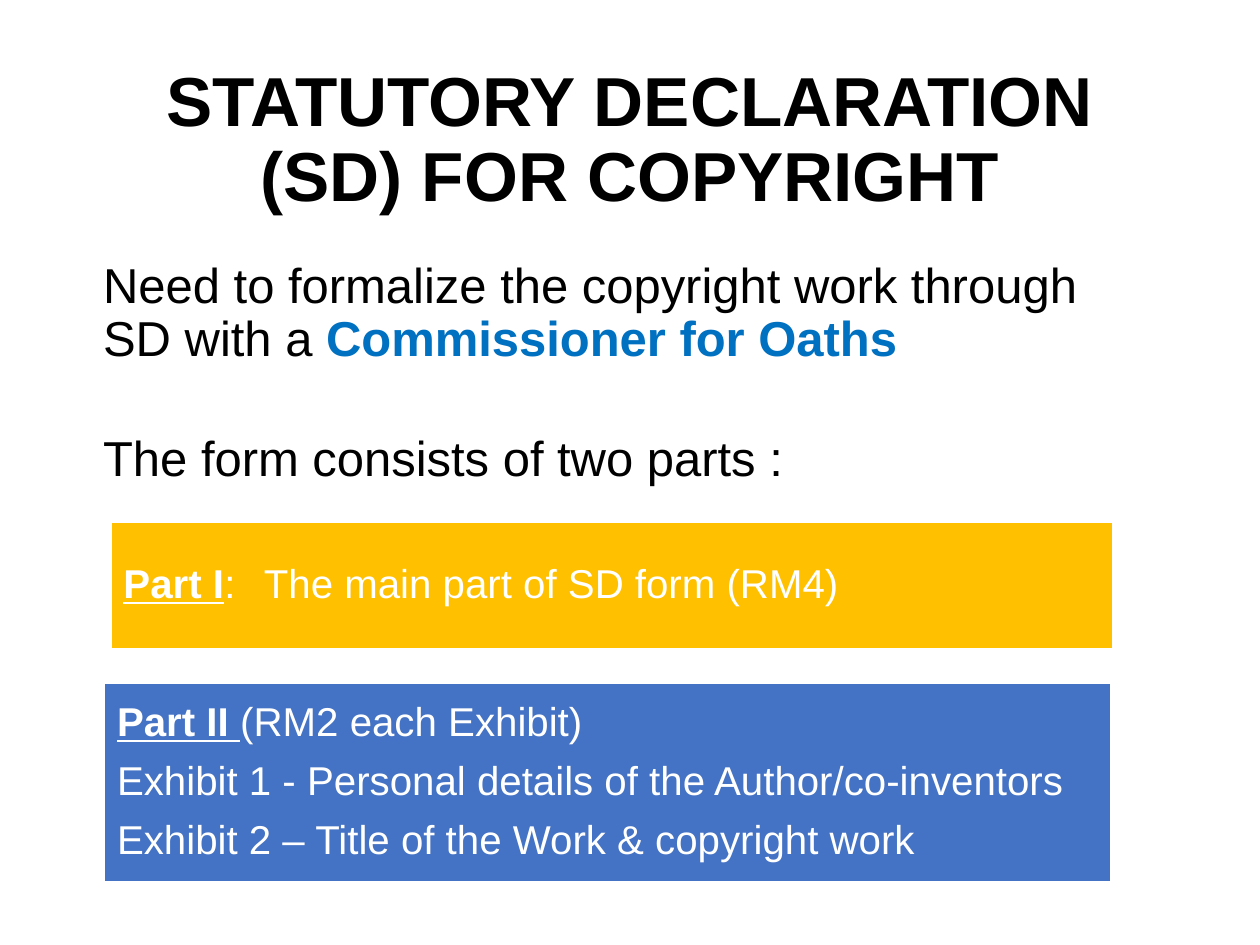
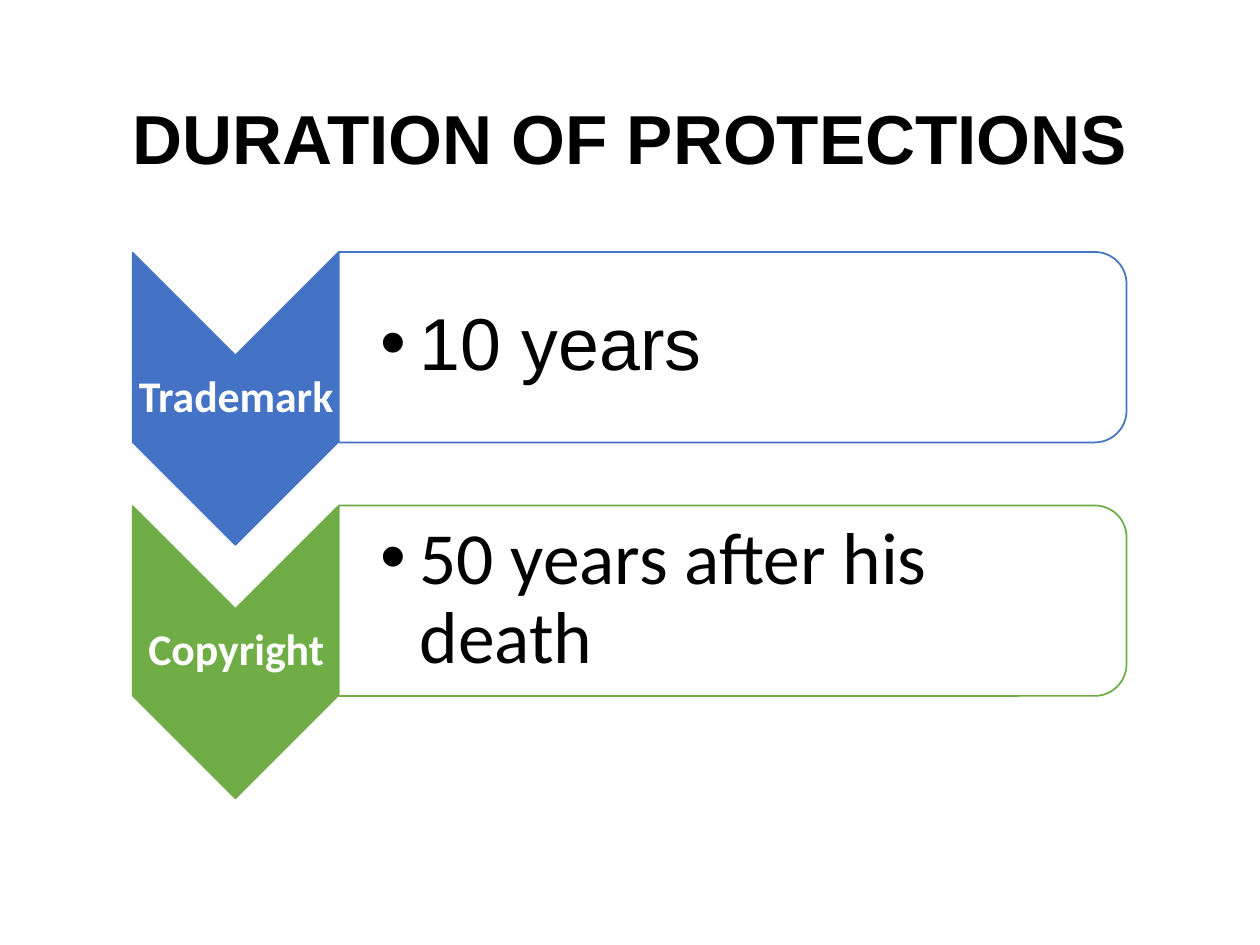
"""Builds two slides on the statutory declaration and the duration of protections."""
from dataclasses import dataclass

from lxml.etree import SubElement
from pptx import Presentation
from pptx.dml.color import RGBColor as RGB
from pptx.enum.shapes import MSO_SHAPE as SHAPE
from pptx.enum.text import MSO_ANCHOR as ANCHOR, MSO_AUTO_SIZE as AUTO_SIZE, PP_ALIGN as ALIGN
from pptx.oxml.ns import qn
from pptx.util import Cm, Pt


@dataclass(frozen=True)
class Theme:
    black: RGB = RGB(0x00, 0x00, 0x00)
    white: RGB = RGB(0xFF, 0xFF, 0xFF)
    blue: RGB = RGB(0x44, 0x72, 0xC4)
    green: RGB = RGB(0x70, 0xAD, 0x47)
    amber: RGB = RGB(0xFF, 0xC0, 0x00)
    highlight: RGB = RGB(0x00, 0x70, 0xC0)
    font: str = "Arial"
    label_font: str = "Calibri"
    title_size: float = 39.6
    body_size: float = 28
    part_size: float = 23
    label_size: float = 25
    duration_size: float = 42


theme = Theme()


def write_text(shape, paragraphs, size, color, font=theme.font, bold=False, align=ALIGN.LEFT,
               anchor=ANCHOR.MIDDLE, inset=(0.25, 0.25), before=0, after=0):
    """Fill a shape with paragraphs, each a list of (text, run overrides) pairs."""
    frame = shape.text_frame
    frame.word_wrap = True
    frame.auto_size = AUTO_SIZE.NONE
    frame.vertical_anchor = anchor
    frame.margin_left = frame.margin_right = Cm(inset[0])
    frame.margin_top = frame.margin_bottom = Cm(inset[1])
    for index, pieces in enumerate(paragraphs):
        paragraph = frame.add_paragraph() if index else frame.paragraphs[0]
        paragraph.alignment = align
        paragraph.line_spacing = 0.9
        paragraph.space_before = Pt(before)
        paragraph.space_after = Pt(after)
        for text, overrides in pieces:
            run = paragraph.add_run()
            run.text = text
            run.font.name = font
            run.font.size = Pt(size)
            run.font.bold = overrides.get("bold", bold)
            run.font.underline = overrides.get("underline", False)
            run.font.color.rgb = overrides.get("color", color)
    return frame


def add_block(slide, kind, box, fill, line):
    """Add a flat preset shape with a thin outline."""
    shape = slide.shapes.add_shape(kind, *map(Cm, box))
    shape.shadow.inherit = False
    shape.fill.solid()
    shape.fill.fore_color.rgb = fill
    shape.line.color.rgb = line
    shape.line.width = Pt(1)
    return shape


presentation = Presentation()
presentation.slide_width, presentation.slide_height = Cm(25.4), Cm(19.05)
title_only = presentation.slide_layouts[5]

slides = []
for heading in ("STATUTORY DECLARATION (SD) FOR COPYRIGHT", "DURATION OF PROTECTIONS"):
    slide = presentation.slides.add_slide(title_only)
    title = slide.shapes.title
    title.left, title.top, title.width, title.height = map(Cm, (1.75, 1.02, 21.9, 3.68))
    write_text(title, [[(heading, {})]], theme.title_size, theme.black, bold=True,
               align=ALIGN.CENTER, inset=(0.33, 0.18))
    slides.append(slide)
declaration, duration = slides

body = declaration.shapes.add_textbox(Cm(1.75), Cm(5.08), Cm(21.9), Cm(5.2))
body_frame = write_text(
    body,
    [[("Need to formalize the copyright work through SD with a ", {}),
      ("Commissioner for Oaths", {"bold": True, "color": theme.highlight})],
     [("The form consists of two parts :", {})]],
    theme.body_size, theme.black, anchor=ANCHOR.TOP, inset=(0.33, 0.18), before=10)
body_frame.paragraphs[1].space_before = Pt(38.5)

part_name = {"bold": True, "underline": True}
parts = [
    ((2.24, 10.52, 20.19, 2.57), theme.amber,
     [[("Part I", part_name), (":\tThe main part of SD form (RM4)", {})]]),
    ((2.11, 13.77, 20.29, 4.01), theme.blue,
     [[("Part II ", part_name), ("(RM2 each Exhibit)", {})],
      [("Exhibit 1 - Personal details of the Author/co-inventors", {})],
      [("Exhibit 2 – Title of the Work & copyright work", {})]]),
]
for box, fill, paragraphs in parts:
    band = add_block(declaration, SHAPE.RECTANGLE, box, fill, theme.white)
    band_frame = write_text(band, paragraphs, theme.part_size, theme.white, after=9)
    tab_list = SubElement(band_frame.paragraphs[0]._p.get_or_add_pPr(), qn("a:tabLst"))
    SubElement(tab_list, qn("a:tab"), pos=str(Cm(2.83)), algn="l")

row_pitch = 5.11
protections = [
    ("Trademark", "10 years", theme.blue, theme.font),
    ("Copyright", "50 years after his death", theme.green, theme.label_font),
]
for row, (name, years, color, years_font) in enumerate(protections):
    offset = row * row_pitch
    chevron = add_block(duration, SHAPE.CHEVRON, (1.8, 5.97 + offset, 5.89, 4.14), color, color)
    chevron.rotation = 90
    label = duration.shapes.add_textbox(Cm(2.69), Cm(7.14 + offset), Cm(4.14), Cm(1.78))
    write_text(label, [[(name, {})]], theme.label_size, theme.white, theme.label_font, bold=True,
               align=ALIGN.CENTER, inset=(0.04, 0.04))

    panel = add_block(duration, SHAPE.ROUND_2_SAME_RECTANGLE,
                      (12.85, -0.94 + offset, 3.84, 15.88), theme.white, color)
    panel.rotation = 90
    term = duration.shapes.add_textbox(Cm(6.83), Cm(5.26 + offset), Cm(15.7), Cm(3.45))
    term_frame = write_text(term, [[(years, {})]], theme.duration_size, theme.black, years_font,
                            inset=(0.08, 0.08), after=6)
    term_frame.margin_left = Cm(0.84)
    properties = term_frame.paragraphs[0]._p.get_or_add_pPr()
    properties.set("marL", str(Cm(0.79)))
    properties.set("indent", str(-Cm(0.79)))
    SubElement(properties, qn("a:buFont"), typeface=theme.font)
    SubElement(properties, qn("a:buChar"), char="•")

presentation.save("out.pptx")
